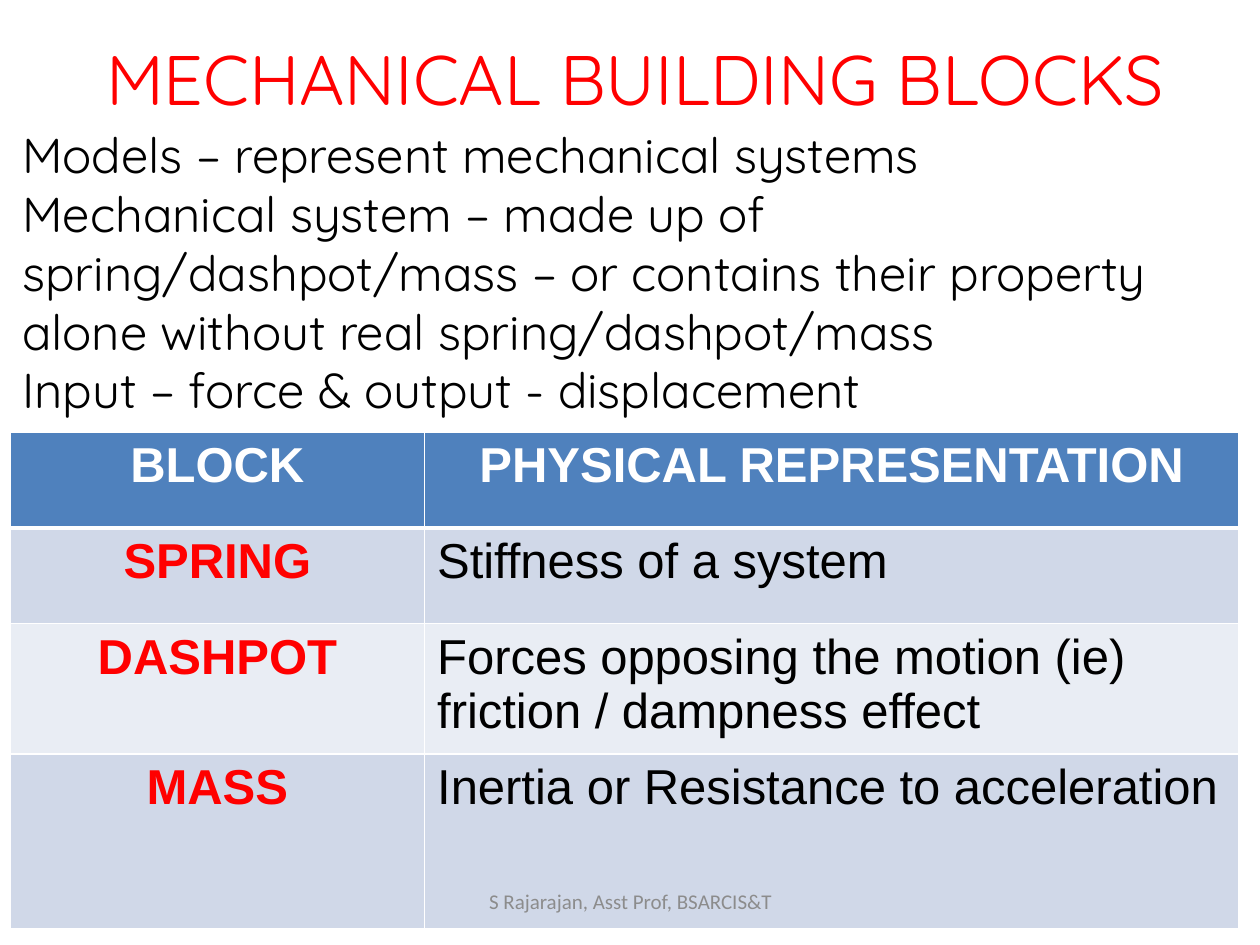
from lxml import etree
from pptx import Presentation
from pptx import util as u
from pptx.dml.color import RGBColor
from pptx.enum import text
from pptx.oxml import ns

Inches = u.Inches
COLORS = {
    "red": "FF0000", "black": "000000", "white": "FFFFFF", "grey": "8C8C8C",
    "header": "4F81BD", "band_dark": "D0D8E8", "band_light": "E9EDF4",
}
BODY = [
    "Models – represent mechanical systems",
    "Mechanical system – made up of spring/dashpot/mass – or contains "
    "their property alone without real spring/dashpot/mass",
    "Input – force & output - displacement",
]
BLOCKS = [
    ("BLOCK", "PHYSICAL REPRESENTATION"),
    ("SPRING", "Stiffness of a system"),
    ("DASHPOT", "Forces opposing the motion (ie) friction / dampness effect"),
    ("MASS", "Inertia or Resistance to acceleration"),
]
COL_WIDTHS = (3.29, 6.46)
ROW_HEIGHTS = (0.76, 0.76, 1.03, 1.39)


def rgb(name):
    return RGBColor.from_string(COLORS[name])


def write(tf, lines, size=28, font="Quicksand", color="black", bold=False,
          align=text.PP_ALIGN.LEFT):
    for i, line in enumerate(lines):
        p = tf.paragraphs[0] if i == 0 else tf.add_paragraph()
        p.alignment = align
        r = p.add_run()
        r.text = line
        r.font.size, r.font.name, r.font.bold = u.Pt(size), font, bold
        r.font.color.rgb = rgb(color)


def add_title(s, box):
    sp = s.shapes.title
    sp.left, sp.top, sp.width, sp.height = map(Inches, box)
    tf = sp.text_frame
    tf.auto_size = text.MSO_AUTO_SIZE.NONE
    tf.vertical_anchor = text.MSO_ANCHOR.BOTTOM
    tf.margin_bottom = Inches(0.13)
    write(tf, ["MECHANICAL BUILDING BLOCKS"], size=40, color="red",
          align=text.PP_ALIGN.CENTER)


def add_text_box(s, box, lines, anchor=text.MSO_ANCHOR.TOP,
                 fit=text.MSO_AUTO_SIZE.NONE, **fmt):
    tf = s.shapes.add_textbox(*map(Inches, box)).text_frame
    tf.word_wrap = True
    tf.auto_size = fit
    tf.vertical_anchor = anchor
    write(tf, lines, **fmt)


def set_borders(cell, widths):
    tcPr = cell._tc.get_or_add_tcPr()
    for side, width in zip("LRTB", widths):
        ln = etree.SubElement(tcPr, ns.qn(f"a:ln{side}"), w=str(u.Pt(width)))
        fill = etree.SubElement(ln, ns.qn("a:solidFill"))
        etree.SubElement(fill, ns.qn("a:srgbClr"), val=COLORS["white"])


def add_block_table(s, box):
    table = s.shapes.add_table(len(BLOCKS), 2, *map(Inches, box)).table
    for col, width in zip(table.columns, COL_WIDTHS):
        col.width = Inches(width)
    for i, (row, height) in enumerate(zip(table.rows, ROW_HEIGHTS)):
        row.height = Inches(height)
        band = "header" if i == 0 else ("band_light", "band_dark")[i % 2]
        for j, cell in enumerate(row.cells):
            # Rule under the header is heavier than the rest
            set_borders(cell, (1, 1, 3 if i == 1 else 1, 3 if i == 0 else 1))
            cell.fill.solid()
            cell.fill.fore_color.rgb = rgb(band)
            label = i == 0 or j == 0
            color = "white" if i == 0 else "red" if j == 0 else "black"
            align = text.PP_ALIGN.CENTER if label else text.PP_ALIGN.LEFT
            write(cell.text_frame, [BLOCKS[i][j]], font="Arial", color=color,
                  bold=label, align=align)


def main():
    prs = Presentation()
    prs.slide_width, prs.slide_height = Inches(10), Inches(7.5)
    s = prs.slides.add_slide(prs.slide_layouts[5])
    # Title and introduction
    add_title(s, (-0.5, 0.83, 11.08, 0.25))
    add_text_box(s, (0.08, 0.94, 9.5, 4.34), BODY,
                 fit=text.MSO_AUTO_SIZE.SHAPE_TO_FIT_TEXT)
    # Building blocks
    add_block_table(s, (0.08, 3.43, sum(COL_WIDTHS), sum(ROW_HEIGHTS)))
    # Footer
    add_text_box(s, (3.42, 6.95, 3.17, 0.4),
                 ["S Rajarajan, Asst Prof, BSARCIS&T"],
                 anchor=text.MSO_ANCHOR.MIDDLE, size=12, font="Calibri",
                 color="grey", align=text.PP_ALIGN.CENTER)
    prs.save("out.pptx")


if __name__ == "__main__":
    main()
